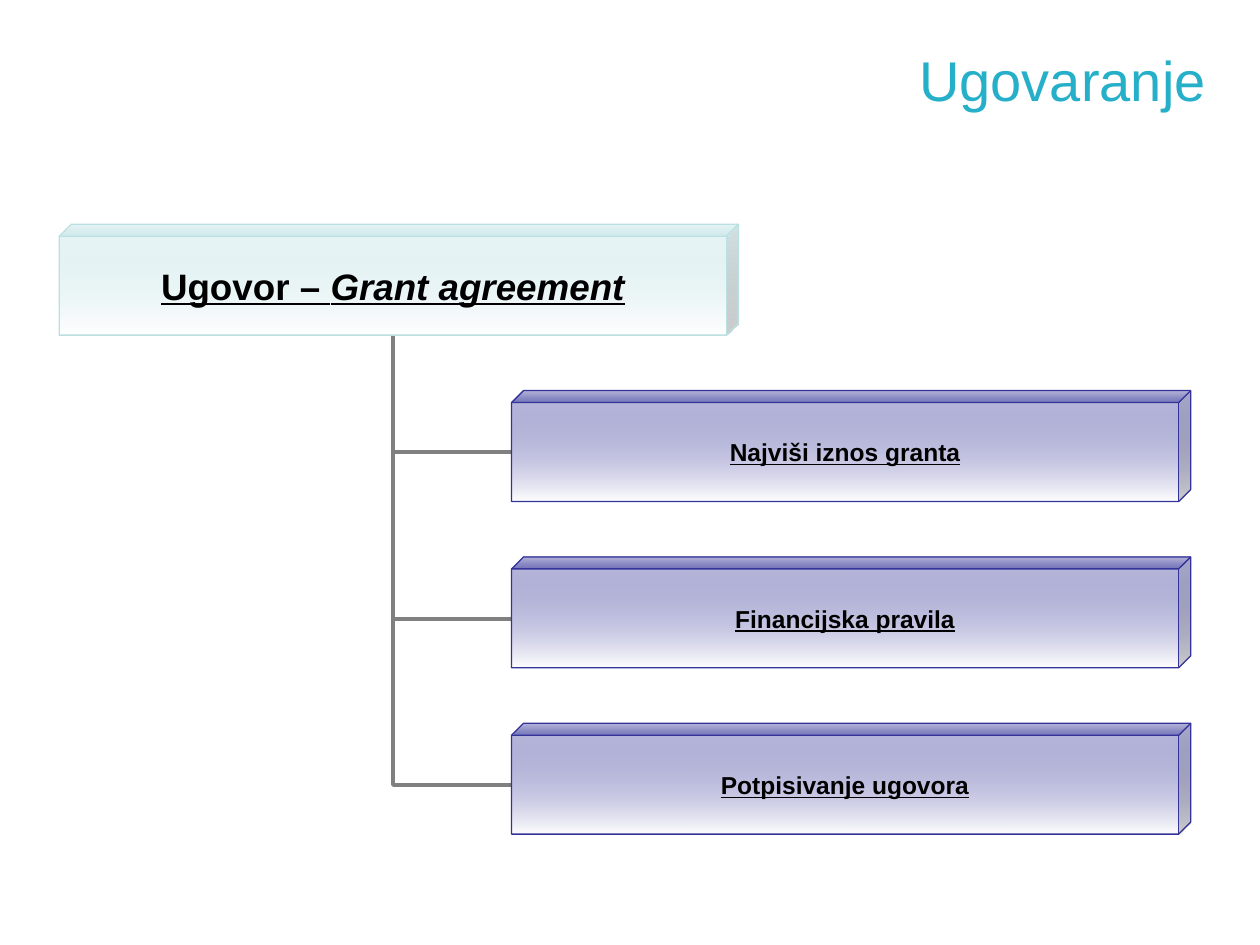
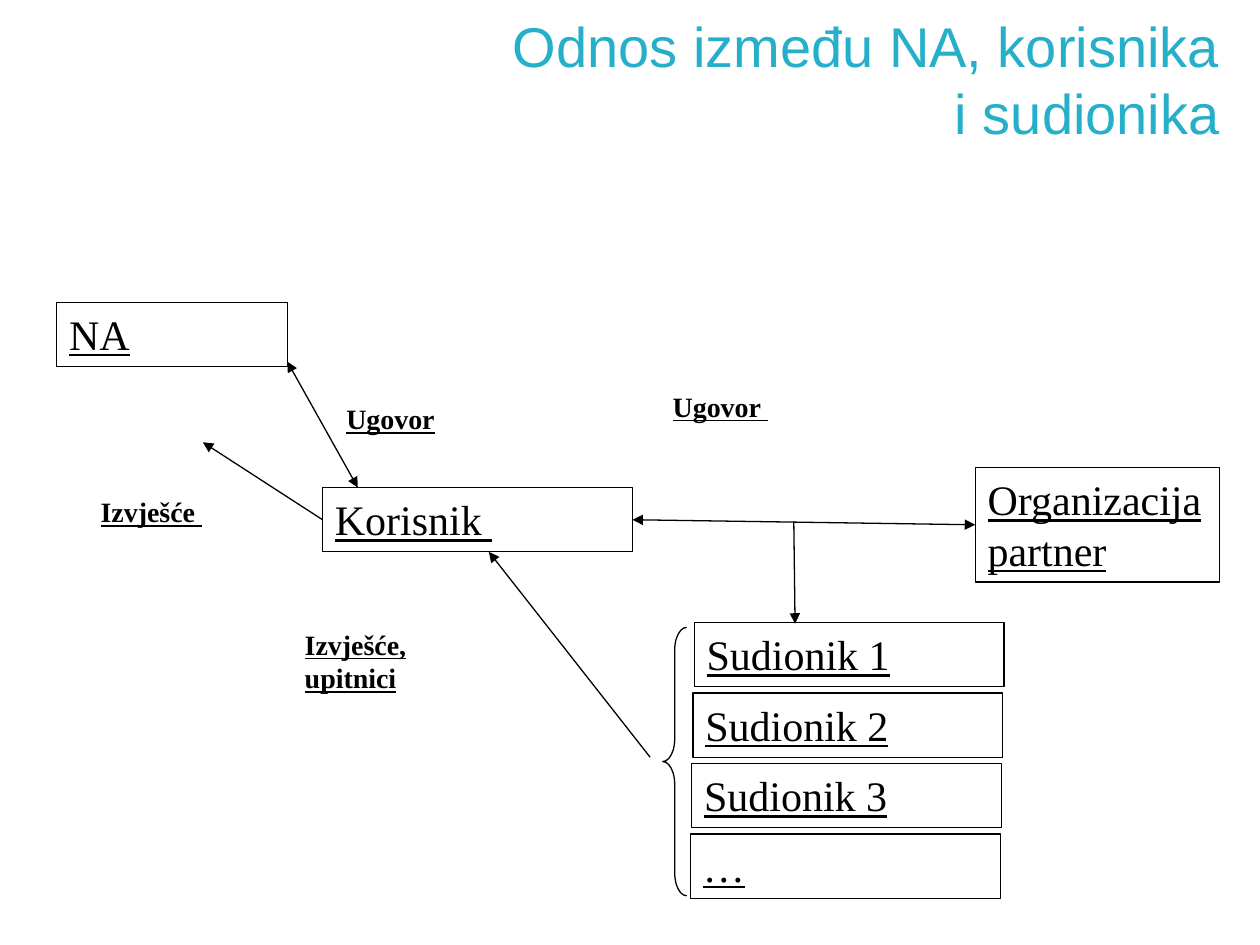
from lxml import etree
from pptx import Presentation
from pptx.dml.color import RGBColor
from pptx.enum.shapes import MSO_CONNECTOR, MSO_SHAPE
from pptx.enum.text import MSO_ANCHOR, MSO_AUTO_SIZE, PP_ALIGN
from pptx.oxml.ns import qn
from pptx.util import Inches, Pt

TEAL = RGBColor(0x25, 0xAF, 0xC9)
BLACK = RGBColor(0, 0, 0)
WHITE = RGBColor(0xFF, 0xFF, 0xFF)
GRAY = RGBColor(0x80, 0x80, 0x80)
PALE_BLUE = RGBColor(0xBB, 0xE0, 0xE3)
INDIGO = RGBColor(0x33, 0x33, 0x99)

TITLE = dict(name="Arial", size=Pt(32))
ROOT = dict(name="Arial", size=Pt(21), bold=True, underline=True)
BRANCH = dict(ROOT, size=Pt(14))
PARTY = dict(name="Times New Roman", size=Pt(24), underline=True)
LABEL = dict(PARTY, size=Pt(16), bold=True)

CUBE_W, CUBE_H, CUBE_DEPTH = 5.39, 0.88, 0.108
PARTY_H = 0.51


def add_run(p, text, style, color=BLACK):
    r = p.add_run()
    r.text = text
    for key, value in style.items():
        setattr(r.font, key, value)
    r.font.color.rgb = color
    return r


def add_lines(tf, lines, style, color=BLACK, align=PP_ALIGN.LEFT):
    for i, line in enumerate(lines):
        p = tf.add_paragraph() if i else tf.paragraphs[0]
        p.alignment = align
        add_run(p, line, style, color)


def add_title(slide, x, y, w, h, *lines):
    tf = slide.shapes.add_textbox(*map(Inches, (x, y, w, h))).text_frame
    tf.word_wrap = True
    tf.vertical_anchor = MSO_ANCHOR.MIDDLE
    add_lines(tf, lines, TITLE, TEAL, PP_ALIGN.RIGHT)


def add_outline(slide, kind, x, y, w, h, color=BLACK):
    """Add an unfilled preset shape with a thin line."""
    s = slide.shapes.add_shape(kind, *map(Inches, (x, y, w, h)))
    s.shadow.inherit = False
    s.fill.background()
    s.line.color.rgb = color
    s.line.width = Pt(0.75)
    return s


def add_line(slide, kind, x1, y1, x2, y2, color=BLACK, width=0.75):
    c = slide.shapes.add_connector(kind, *map(Inches, (x1, y1, x2, y2)))
    c.line.color.rgb = color
    c.line.width = Pt(width)
    etree.SubElement(c._element.spPr, qn("a:effectLst"))
    return c


def add_arrow(slide, x1, y1, x2, y2, both=False):
    c = add_line(slide, MSO_CONNECTOR.STRAIGHT, x1, y1, x2, y2)
    ln = c.line._get_or_add_ln()
    for tag in ["a:headEnd"] * both + ["a:tailEnd"]:
        etree.SubElement(ln, qn(tag), type="triangle")
    return c


def add_branch_line(slide, x1, y1, x2, y2):
    """Draw an elbow that drops from the first point, then runs right."""
    c = add_line(slide, MSO_CONNECTOR.ELBOW, x1, y1, x2, y2, GRAY, 2.25)
    sp_pr = c._element.spPr
    sp_pr.find(qn("a:prstGeom")).set("prst", "bentConnector2")
    sp_pr.find(qn("a:xfrm")).set("rot", "10800000")


def add_cube(slide, x, y, color):
    """Add a cube that fades to white and return its paragraph."""
    s = add_outline(slide, MSO_SHAPE.CUBE, x, y, CUBE_W, CUBE_H, color)
    s.adjustments[0] = CUBE_DEPTH
    s.fill.gradient()
    s.fill.gradient_angle = 270
    for stop, position, shade in zip(s.fill.gradient_stops, (0, 1), (color, WHITE)):
        stop.position = position
        stop.color.rgb = shade
    first = s._element.spPr.find(qn("a:gradFill")).find(".//" + qn("a:srgbClr"))
    etree.SubElement(first, qn("a:alpha"), val="40000")
    tf = s.text_frame
    tf.word_wrap = False
    tf.vertical_anchor = MSO_ANCHOR.MIDDLE
    for side in ("left", "top", "right", "bottom"):
        setattr(tf, f"margin_{side}", 0)
    p = tf.paragraphs[0]
    p.alignment = PP_ALIGN.CENTER
    return p


def add_contract_tree(slide, x, y, branches):
    branch_x, step = x + 3.59, 1.32
    branch_tops = [y + step * (i + 1) for i in range(len(branches))]
    for top in reversed(branch_tops):
        add_branch_line(slide, x + 2.65, y + CUBE_H, branch_x, top + 0.49)
    p = add_cube(slide, x, y, PALE_BLUE)
    add_run(p, "Ugovor – ", ROOT)
    add_run(p, "Grant agreement", dict(ROOT, italic=True))
    for top, text in zip(branch_tops, branches):
        add_run(add_cube(slide, branch_x, top, INDIGO), text, BRANCH)


def add_party(slide, text, x, y, w=2.46, h=PARTY_H):
    s = add_outline(slide, MSO_SHAPE.RECTANGLE, x, y, w, h)
    tf = s.text_frame
    tf.word_wrap = True
    tf.vertical_anchor = MSO_ANCHOR.TOP
    tf.auto_size = MSO_AUTO_SIZE.SHAPE_TO_FIT_TEXT
    add_lines(tf, [text], PARTY)
    return s


def add_label(slide, x, y, w, h, *lines):
    tf = slide.shapes.add_textbox(*map(Inches, (x, y, w, h))).text_frame
    tf.word_wrap = False
    add_lines(tf, lines, LABEL)


def add_participants(slide, x, y, names):
    """Stack the participants beside a brace."""
    brace = add_outline(slide, MSO_SHAPE.LEFT_BRACE, x, y + 0.04, 0.19, 2.13)
    brace.adjustments[0] = 0.946
    for i, name in enumerate(names):
        add_party(slide, name, x + 0.25 - 0.01 * i, y + 0.56 * i)


def add_relations(slide, x, y):
    add_party(slide, "NA", x, y, 1.83)
    beneficiary = add_party(slide, "Korisnik ", x + 2.11, y + 1.47)
    partner = add_party(slide, "Organizacija partner", x + 7.29, y + 1.31, 1.94, 0.91)
    add_participants(slide, x + 4.81, y + 2.54,
                     ["Sudionik 1", "Sudionik 2", "Sudionik 3", "…"])

    add_arrow(slide, x + 1.83, y + 0.47, x + 2.39, y + 1.47, both=True)
    contract = add_arrow(slide, x + 4.6, y + 1.73, x + 7.29, y + 1.73, both=True)
    contract.begin_connect(beneficiary, 3)
    contract.end_connect(partner, 1)
    add_arrow(slide, x + 5.85, y + 1.74, x + 5.86, y + 2.55)
    add_arrow(slide, x + 4.71, y + 3.61, x + 3.43, y + 1.98)
    report = add_arrow(slide, x + 2.09, y + 1.71, x + 1.16, y + 1.11)
    report.begin_connect(beneficiary, 1)

    add_label(slide, x + 2.2, y + 0.74, 0.9, 0.37, "Ugovor")
    add_label(slide, x + 4.79, y + 0.64, 0.95, 0.37, "Ugovor ")
    add_label(slide, x + 1.87, y + 2.53, 1.02, 0.64, "Izvješće,", "upitnici")
    add_label(slide, x + 0.25, y + 1.48, 1.01, 0.37, "Izvješće ")


def main():
    prs = Presentation()
    prs.slide_width, prs.slide_height = Inches(10), Inches(7.5)
    blank = prs.slide_layouts[6]

    slide = prs.slides.add_slide(blank)
    add_title(slide, 1.17, 0, 8.5, 1.25, "Ugovaranje")
    add_contract_tree(slide, 0.47, 1.78, [
        "Najviši iznos granta", "Financijska pravila", "Potpisivanje ugovora"])

    slide = prs.slides.add_slide(blank)
    add_title(slide, 2.87, 0, 6.91, 1.25, "Odnos između NA, korisnika", "i sudionika")
    add_relations(slide, 0.45, 2.4)

    prs.save("out.pptx")


if __name__ == "__main__":
    main()
